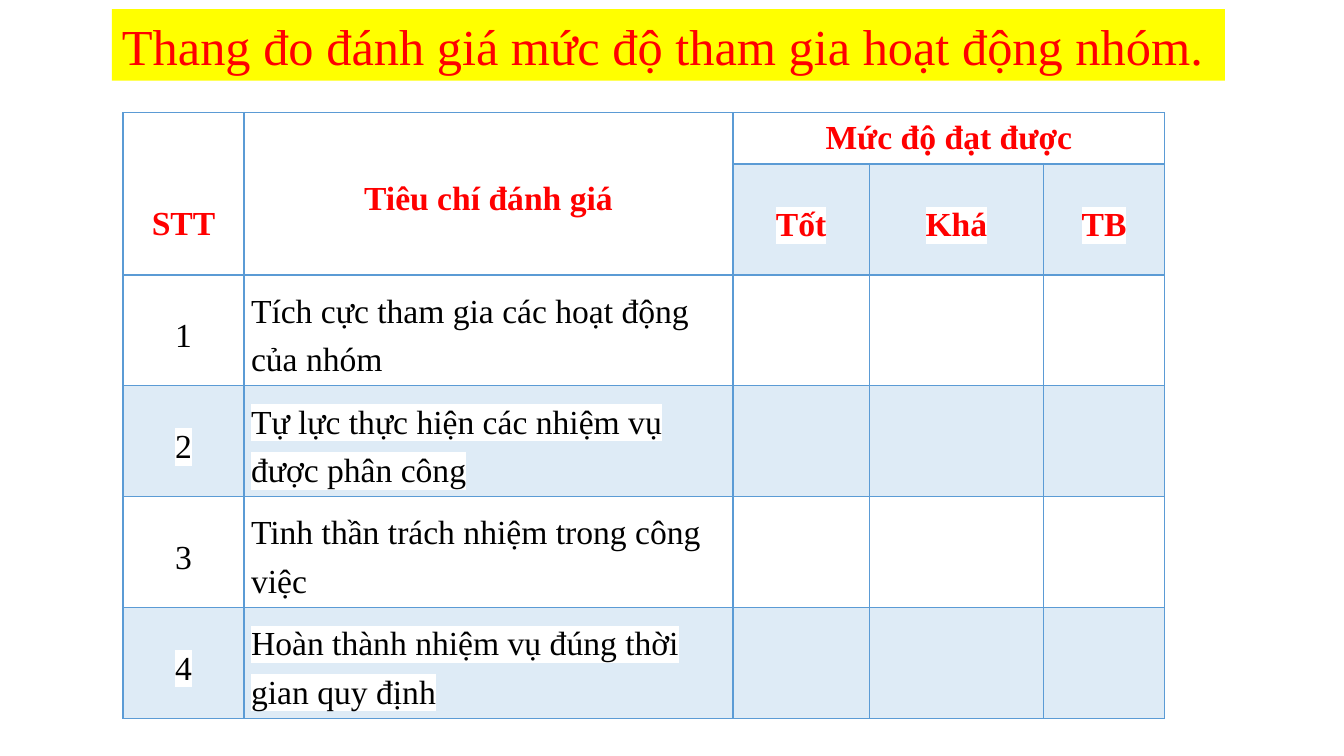
from pptx import Presentation
from pptx.dml.color import RGBColor
from pptx.enum.text import MSO_ANCHOR, PP_ALIGN
from pptx.oxml import parse_xml
from pptx.oxml.ns import nsdecls
from pptx.util import Inches, Pt

MIDDLE = MSO_ANCHOR.MIDDLE
LEFT, CENTER = PP_ALIGN.LEFT, PP_ALIGN.CENTER
FACE = "Times New Roman"
RED, BLACK, WHITE = "FF0000", "000000", "FFFFFF"
YELLOW, BLUE = "FFFF00", "5B9BD5"
COLS = [1.2, 4.85, 1.35, 1.73, 1.2]
ROWS = [0.5] + [1.1] * 5
HEADS = [
    ["STT", "Tiêu chí đánh giá", "Mức độ đạt được", "", ""],
    ["", "", "Tốt", "Khá", "TB"],
]
GOALS = [
    "Tích cực tham gia các hoạt động của nhóm",
    "Tự lực thực hiện các nhiệm vụ được phân công",
    "Tinh thần trách nhiệm trong công việc",
    "Hoàn thành nhiệm vụ đúng thời gian quy định",
]


def rgb(code):
    """Turn a hex string into a colour."""
    return RGBColor.from_string(code)


def style(par, size, color, bold, align):
    """Set the font and alignment of a paragraph."""
    par.alignment = align
    par.font.name = FACE
    par.font.size = Pt(size)
    par.font.bold = bold
    par.font.color.rgb = rgb(color)


def add_title(slide, text):
    """Place the yellow title bar."""
    title = slide.shapes.title
    title.left, title.top = Inches(1.11), Inches(0.09)
    title.width, title.height = Inches(11.04), Inches(0.71)
    title.fill.solid()
    title.fill.fore_color.rgb = rgb(YELLOW)
    title.text_frame.text = text
    title.text_frame.vertical_anchor = MIDDLE
    style(title.text_frame.paragraphs[0], 36, RED, False, LEFT)


def set_edges(cell, base):
    """Draw the four borders of a cell, with its own bottom width."""
    props = cell._tc.get_or_add_tcPr()
    for spot, (side, width) in enumerate(zip("LRTB", (1, 1, 1, base))):
        props.insert(spot, parse_xml(
            f'<a:ln{side} {nsdecls("a")} w="{Pt(width)}"><a:solidFill>'
            f'<a:srgbClr val="{BLUE}"/></a:solidFill></a:ln{side}>'))


def set_fill(cell, tinted):
    """Tint a cell with pale blue or leave it clear."""
    if not tinted:
        cell.fill.background()
        return
    cell.fill.solid()
    cell.fill.fore_color.rgb = rgb(BLUE)
    tone = cell._tc.tcPr.find(".//{*}solidFill/{*}srgbClr")
    tone.append(parse_xml(f'<a:alpha {nsdecls("a")} val="20000"/>'))


def mark(run):
    """Put a white highlight behind a run."""
    run._r.get_or_add_rPr().append(parse_xml(
        f'<a:highlight {nsdecls("a")}><a:srgbClr val="{WHITE}"/></a:highlight>'))


def write(cell, text, head, align, space):
    """Fill a cell with one formatted paragraph."""
    cell.text = text
    cell.vertical_anchor = MIDDLE
    cell.margin_left = cell.margin_right = Inches(0.07)
    cell.margin_top = cell.margin_bottom = Inches(0.07)
    par = cell.text_frame.paragraphs[0]
    style(par, 24, RED if head else BLACK, head, align)
    par.line_spacing = space


def add_grid(slide):
    """Build the rating table."""
    body = [[str(num), goal, "", "", ""] for num, goal in enumerate(GOALS, 1)]
    data = HEADS + body
    frame = slide.shapes.add_table(
        len(ROWS), len(COLS), Inches(1.22), Inches(1.12),
        Inches(sum(COLS)), Inches(sum(ROWS)))
    grid = frame.table
    grid.first_row = grid.horz_banding = False
    for col, width in zip(grid.columns, COLS):
        col.width = Inches(width)
    for row, height in zip(grid.rows, ROWS):
        row.height = Inches(height)
    for r, line in enumerate(data):
        for c, text in enumerate(line):
            cell = grid.cell(r, c)
            tall = r < 2 and c < 2
            set_fill(cell, r % 2 == 1 and not tall)
            set_edges(cell, 2 if r == 0 or tall else 1)
            if text:
                align = LEFT if r > 1 and c == 1 else CENTER
                top = r == 0 and c == 2
                write(cell, text, r < 2, align, 1.0 if top else 1.3)
                if not top:
                    mark(cell.text_frame.paragraphs[0].runs[0])
    grid.cell(0, 0).margin_top = Inches(0.55)
    for c in (0, 1):
        grid.cell(0, c).merge(grid.cell(1, c))
    grid.cell(0, 2).merge(grid.cell(0, 4))


def main():
    """Build and save the slide."""
    deck = Presentation()
    deck.slide_width, deck.slide_height = Inches(13.33), Inches(7.5)
    slide = deck.slides.add_slide(deck.slide_layouts[5])
    add_grid(slide)
    add_title(slide, "Thang đo đánh giá mức độ tham gia hoạt động nhóm.")
    deck.save("out.pptx")


if __name__ == "__main__":
    main()
